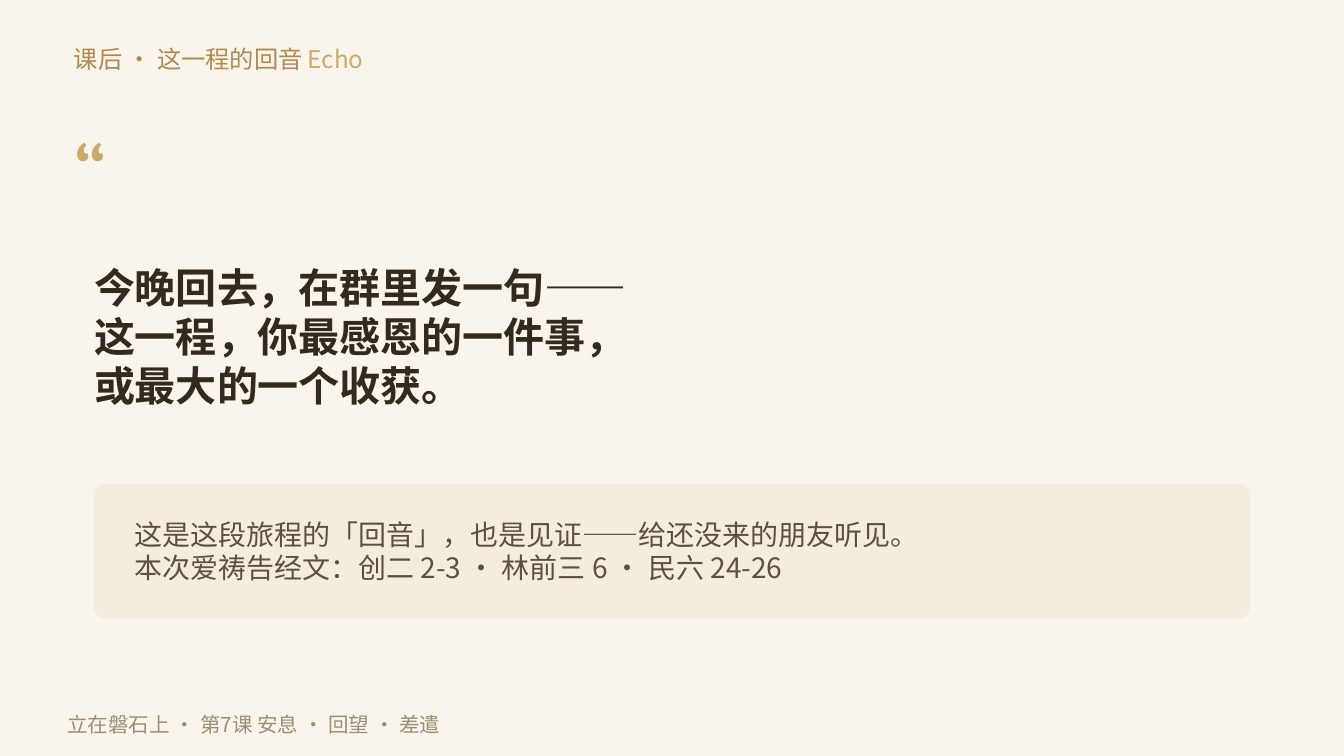
from lxml.etree import SubElement
from pptx import Presentation
from pptx.dml.color import RGBColor
from pptx.enum.shapes import MSO_SHAPE
from pptx.enum.text import MSO_ANCHOR, MSO_AUTO_SIZE, PP_ALIGN
from pptx.oxml.ns import qn
from pptx.util import Pt

# Content: each text is a list of lines, each line a list of (words, colour) runs
HEADING = [[("课后 · 这一程的回音 ", "bronze"), ("Echo", "gold")]]
QUOTE_MARK = [[("“", "gold")]]
INVITATION = [
    [("今晚回去，在群里发一句——", "ink")],
    [("这一程，你最感恩的一件事，", "ink")],
    [("或最大的一个收获。", "ink")],
]
ECHO_NOTE = [
    [("这是这段旅程的「回音」，也是见证——给还没来的朋友听见。", "brown")],
    [("本次爱祷告经文：创二 2-3 · 林前三 6 · 民六 24-26", "brown")],
]
FOOTER = [[("立在磐石上 · 第7课 安息 · 回望 · 差遣", "taupe")]]

COLOURS = {
    "paper": "FAF5EC", "panel": "F4ECDD", "bronze": "B0894F", "gold": "CBA968",
    "ink": "33291E", "brown": "5C5043", "taupe": "9C8E76",
}
SANS, SERIF = "Noto Sans CJK SC", "Cambria"


def colour(name):
    return RGBColor.from_string(COLOURS[name])


def write(lines, *, box, size, font=SANS, bold=False, holder=None):
    """Write lines into a new text box, or into the given placeholder."""
    holder = holder or slide.shapes.add_textbox(0, 0, 0, 0)
    holder.left, holder.top, holder.width, holder.height = map(Pt, box)
    frame = holder.text_frame
    frame.word_wrap = True
    frame.auto_size = MSO_AUTO_SIZE.NONE
    frame.vertical_anchor = MSO_ANCHOR.MIDDLE
    frame.margin_left = frame.margin_right = 0
    frame.margin_top = frame.margin_bottom = 0
    for index, line in enumerate(lines):
        paragraph = frame.add_paragraph() if index else frame.paragraphs[0]
        paragraph.alignment = PP_ALIGN.LEFT
        for words, tone in line:
            run = paragraph.add_run()
            run.text = words
            run.font.size, run.font.bold, run.font.name = Pt(size), bold, font
            run.font.color.rgb = colour(tone)
            # Chinese characters take the East Asian typeface
            SubElement(run.font._element, qn("a:ea"), typeface=font)


deck = Presentation()
deck.slide_width, deck.slide_height = Pt(720), Pt(405)
slide = deck.slides.add_slide(deck.slide_layouts[5])
slide.background.fill.solid()
slide.background.fill.fore_color.rgb = colour("paper")

# Heading and quotation
write(HEADING, box=(39.6, 20.16, 612, 23.04), size=13, holder=slide.shapes.title)
write(QUOTE_MARK, box=(39.6, 68.4, 72, 43.2), size=48, font=SERIF)
write(INVITATION, box=(50.4, 122.4, 612, 115.2), size=22, bold=True)

# Panel with the echo note
panel = slide.shapes.add_shape(
    MSO_SHAPE.ROUNDED_RECTANGLE, Pt(50.4), Pt(259.2), Pt(619.2), Pt(72))
panel.adjustments[0] = 0.08
panel.shadow.inherit = False
panel.fill.solid()
panel.fill.fore_color.rgb = colour("panel")
panel.line.fill.background()
write(ECHO_NOTE, box=(72, 270, 576, 50.4), size=15)

# Footer
write(FOOTER, box=(36, 378, 540, 20.16), size=11)

deck.save("out.pptx")
